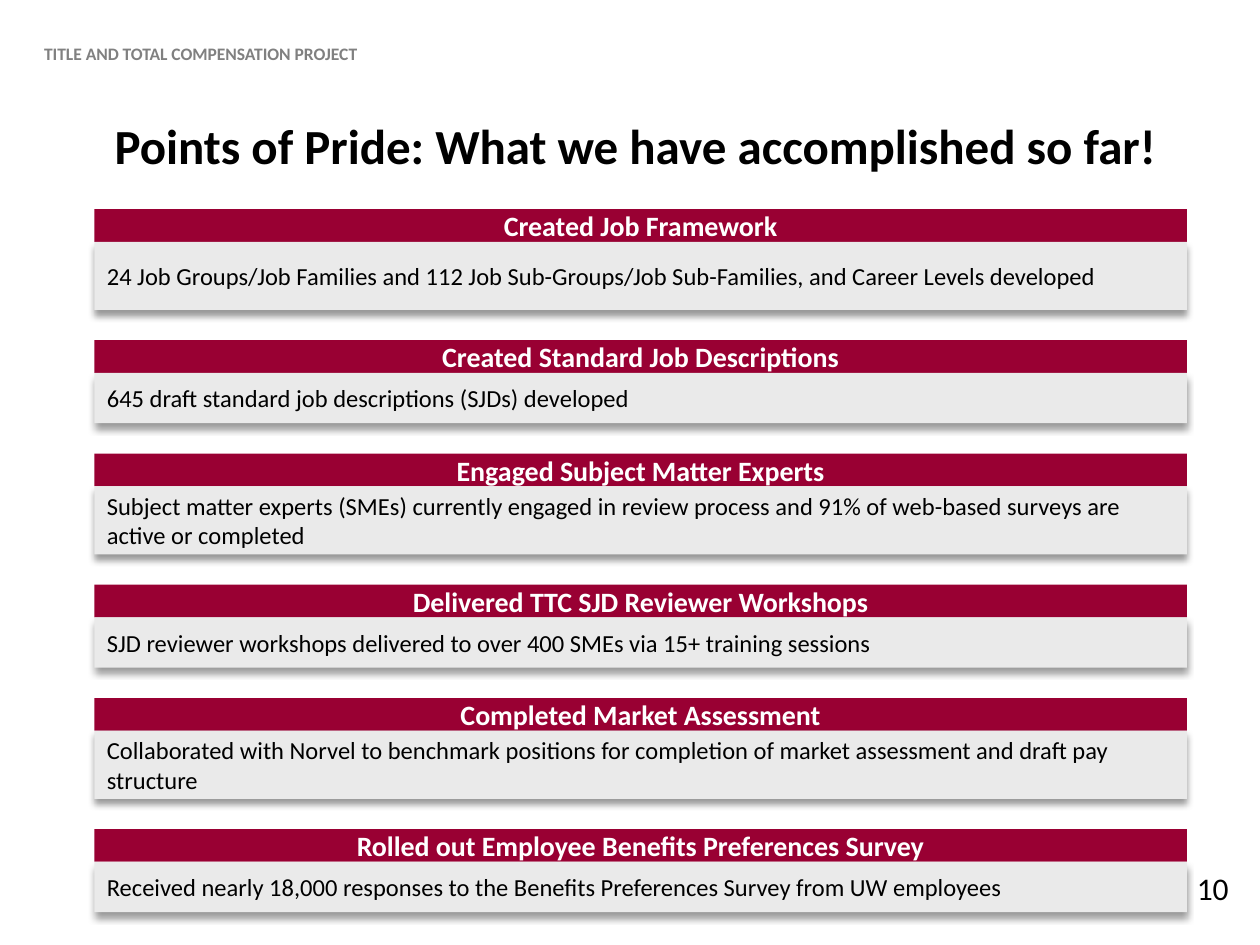
import dataclasses
import pptx
import pptx.util
import pptx.dml.color
import pptx.enum.shapes
import pptx.enum.text
import pptx.oxml
import pptx.oxml.ns

Inches = pptx.util.Inches
ALIGN = pptx.enum.text.PP_ALIGN
ANCHOR = pptx.enum.text.MSO_ANCHOR


@dataclasses.dataclass(frozen=True)
class Theme:
    font: str = "Calibri"
    red: str = "990033"
    pale: str = "EAEAEA"
    gray: str = "808080"
    black: str = "000000"
    white: str = "FFFFFF"
    label: int = 10
    body: int = 14
    head: int = 16
    number: int = 18
    title: int = 28


def color(code):
    return pptx.dml.color.RGBColor.from_string(code)


class Deck:
    def __init__(self, theme):
        self.theme = theme
        self.show = pptx.Presentation()
        self.show.slide_width = Inches(10)
        self.show.slide_height = Inches(7.5)
        self.slide = self.show.slides.add_slide(self.show.slide_layouts[6])

    def fill_text(self, shape, words, size, ink, bold=False, align=ALIGN.LEFT,
                  anchor=ANCHOR.MIDDLE, wrap=True):
        frame = shape.text_frame
        frame.word_wrap = wrap
        frame.vertical_anchor = anchor
        para = frame.paragraphs[0]
        para.alignment = align
        run = para.add_run()
        run.text = words
        run.font.name = self.theme.font
        run.font.size = pptx.util.Pt(size)
        run.font.bold = bold
        run.font.color.rgb = color(ink)

    def text(self, box, words, size, ink, **style):
        shape = self.slide.shapes.add_textbox(*map(Inches, box))
        self.fill_text(shape, words, size, ink, **style)
        return shape

    def bar(self, box, fill, words, size, ink, **style):
        shape = self.slide.shapes.add_shape(
            pptx.enum.shapes.MSO_SHAPE.RECTANGLE, *map(Inches, box))
        shape.shadow.inherit = False
        shape.fill.solid()
        shape.fill.fore_color.rgb = color(fill)
        shape.line.fill.background()
        self.fill_text(shape, words, size, ink, **style)
        return shape

    def shade(self, shape):
        """Cast a soft shadow straight down."""
        effects = shape.element.spPr.find(pptx.oxml.ns.qn("a:effectLst"))
        effects.append(pptx.oxml.parse_xml(
            f'<a:outerShdw {pptx.oxml.ns.nsdecls("a")} blurRad="{pptx.util.Pt(4)}" '
            f'dist="{pptx.util.Pt(3)}" dir="5400000" rotWithShape="0">'
            f'<a:srgbClr val="{self.theme.black}"><a:alpha val="40000"/></a:srgbClr>'
            '</a:outerShdw>'))

    def point(self, top, tall, head, body):
        """Add a red heading over a gray panel; return the panel's bottom."""
        left, width, cap = 0.75, 8.67, 0.26
        look = self.theme
        self.bar((left, top, width, cap), look.red, head, look.head, look.white,
                 bold=True, align=ALIGN.CENTER)
        panel = self.bar((left, top + cap, width, tall), look.pale, body,
                         look.body, look.black)
        self.shade(panel)
        return top + cap + tall


TALL, SHORT, GAP = 0.54, 0.4, 0.24
POINTS = [
    (TALL, "Created Job Framework",
     "24 Job Groups/Job Families and 112 Job Sub-Groups/Job Sub-Families, "
     "and Career Levels developed"),
    (SHORT, "Created Standard Job Descriptions",
     "645 draft standard job descriptions (SJDs) developed"),
    (TALL, "Engaged Subject Matter Experts",
     "Subject matter experts (SMEs) currently engaged in review process "
     "and 91% of web-based surveys are active or completed"),
    (SHORT, "Delivered TTC SJD Reviewer Workshops",
     "SJD reviewer workshops delivered to over 400 SMEs via 15+ training sessions"),
    (TALL, "Completed Market Assessment",
     "Collaborated with Norvel to benchmark positions for completion of "
     "market assessment and draft pay structure"),
    (SHORT, "Rolled out Employee Benefits Preferences Survey",
     "Received nearly 18,000 responses to the Benefits Preferences Survey "
     "from UW employees"),
]


def main():
    look = Theme()
    deck = Deck(look)
    label = deck.text((0, 0.24, 10, 0.37), "TITLE AND TOTAL COMPENSATION PROJECT",
                      look.label, look.gray, bold=True)
    label.text_frame.margin_left = Inches(0.35)
    deck.text((0.25, 0.51, 9.58, 0.92),
              "Points of Pride: What we have accomplished so far!",
              look.title, look.black, bold=True, align=ALIGN.CENTER,
              anchor=ANCHOR.BOTTOM)
    top = 1.66
    for tall, head, body in POINTS:
        top = deck.point(top, tall, head, body) + GAP
    deck.text((9.4, 6.85, 0.46, 0.4), "10", look.number, look.black,
              anchor=ANCHOR.TOP, wrap=False)
    deck.show.save("out.pptx")


if __name__ == "__main__":
    main()
